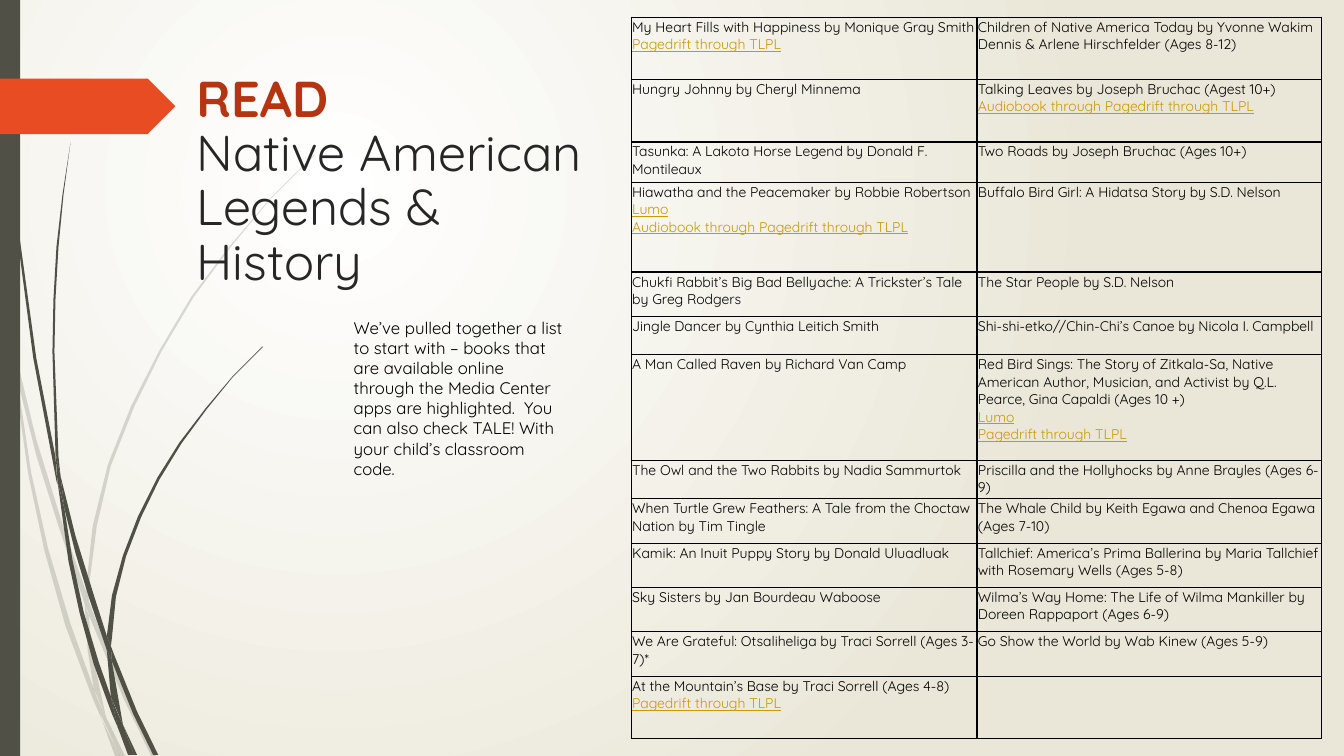
import pptx
import pptx.dml.color
import pptx.enum.shapes
import pptx.enum.text
import pptx.oxml
import pptx.oxml.ns
import pptx.util
from pptx.util import Inches

FONT = "Quicksand"
BLACK, DARK, LINK, ORANGE = "000000", "505046", "CC9900", "E84C22"


def color(hex_string):
    return pptx.dml.color.RGBColor.from_string(hex_string)


presentation = pptx.Presentation()
presentation.slide_width = Inches(13.33)
presentation.slide_height = Inches(7.5)
slide = presentation.slides.add_slide(presentation.slide_layouts[6])
shapes = slide.shapes

# Background: radial gradient, brightest left of the middle
background = slide.background.fill
background.gradient()
for stop, stop_color in zip(background.gradient_stops, ("FFFFFF", "EAE7D8")):
    stop.color.rgb = color(stop_color)
gradient = slide.background._cSld.find(".//" + pptx.oxml.ns.qn("a:gradFill"))
gradient.remove(gradient.find(pptx.oxml.ns.qn("a:lin")))
gradient.append(pptx.oxml.parse_xml(
    f'<a:path {pptx.oxml.ns.nsdecls("a")} path="circle">'
    '<a:fillToRect l="50000" t="50000" r="100000" b="100000"/></a:path>'))

# Grass blades: outlines of their pieces, pale ones behind dark ones
pale_pieces = [
    [(0.11, 3.5), (0.09, 3.22), (0, 2.82), (0, 2.99), (0.1, 3.44)],
    [(0.58, 5.22), (0.84, 5.99), (0.85, 5.86), (0.62, 5.2), (0.36, 4.36), (0.14, 3.45),
     (0.17, 3.76), (0.36, 4.52)],
    [(0.92, 6.07), (0.88, 5.96), (0.88, 6.1), (1.23, 6.94), (1.5, 7.5), (1.55, 7.5), (1.27, 6.92)],
    [(1.19, 7.5), (1.24, 7.5), (1.05, 7.11)],
    [(0.93, 6.83), (0.7, 6.19), (0.48, 5.45), (0.31, 4.69), (0.17, 3.76), (0.11, 3.5),
     (0.28, 4.7), (0.44, 5.46), (0.65, 6.21), (0.92, 6.93), (1.01, 7.14), (0.99, 7.07)],
    [(0.84, 5.99), (0.87, 6.46), (0.93, 6.83), (1.05, 7.11), (0.91, 6.46), (0.88, 6.1)],
    [(0.88, 5.84), (0.96, 5.22), (1.1, 4.62), (1.33, 4.04), (1.6, 3.49), (1.92, 2.95),
     (2.29, 2.45), (2.68, 1.98), (3.12, 1.54), (3.12, 1.53), (2.68, 1.97), (2.28, 2.44),
     (1.9, 2.94), (1.58, 3.48), (1.3, 4.03), (1.07, 4.61), (0.92, 5.22), (0.85, 5.86),
     (0.88, 5.96)],
    [(1.01, 7.14), (1.14, 7.5), (1.19, 7.5)],
    [(0.88, 6.08), (0.88, 5.96), (0.85, 5.86), (0.84, 5.99)],
    [(0.96, 6.92), (0.93, 6.83), (0.99, 7.07), (1.19, 7.5), (1.05, 7.11)],
]
dark_pieces = [
    [(0.07, 1.1), (0.17, 2.33), (0.33, 3.55), (0.56, 4.77), (0.57, 4.81), (0.55, 4.53),
     (0.36, 3.55), (0.19, 2.32), (0.08, 1.09), (0.04, 0), (0.03, 0)],
    [(0.88, 5.92), (1.06, 6.45), (1.06, 6.31), (0.93, 5.9), (0.75, 5.32), (0.6, 4.72),
     (0.64, 5.05), (0.75, 5.49)],
    [(1.13, 6.49), (1.1, 6.41), (1.11, 6.56), (1.32, 7.08), (1.52, 7.49), (1.57, 7.49),
     (1.36, 7.06)],
    [(1.1, 6.91), (0.98, 6.57), (0.83, 6.07), (0.72, 5.56), (0.64, 5.05), (0.57, 4.77),
     (0.68, 5.57), (0.79, 6.08), (0.93, 6.59), (1.11, 7.08), (1.17, 7.22), (1.16, 7.17)],
    [(0.6, 4.72), (0.58, 4.53), (0.54, 3.49), (0.55, 2.97), (0.58, 2.45), (0.63, 1.93),
     (0.7, 1.41), (0.62, 1.93), (0.56, 2.45), (0.53, 2.97), (0.52, 3.49), (0.55, 4.49)],
    [(1.33, 7.49), (1.36, 7.49), (1.22, 7.19)],
    [(0.57, 4.77), (0.64, 5.05), (0.6, 4.72), (0.55, 4.49)],
    [(1.11, 6.33), (1.15, 5.92), (1.25, 5.52), (1.4, 5.13), (1.58, 4.76), (1.8, 4.4),
     (2.05, 4.06), (2.31, 3.74), (2.61, 3.44), (2.6, 3.44), (2.31, 3.73), (2.04, 4.05),
     (1.78, 4.39), (1.56, 4.74), (1.37, 5.12), (1.22, 5.51), (1.11, 5.91), (1.06, 6.31),
     (1.1, 6.41)],
    [(1.17, 7.22), (1.27, 7.49), (1.31, 7.49)],
    [(1.06, 6.45), (1.1, 6.91), (1.22, 7.19), (1.11, 6.56)],
    [(1.06, 6.45), (1.11, 6.56), (1.1, 6.41), (1.06, 6.31)],
    [(1.16, 7.06), (1.1, 6.91), (1.17, 7.22), (1.3, 7.49), (1.33, 7.49), (1.22, 7.19)],
]
for opacity, pieces in ((20, pale_pieces), (100, dark_pieces)):
    for piece in pieces:
        outline = [(round(x * 100), round(y * 100)) for x, y in piece]
        builder = shapes.build_freeform(*outline[0], scale=Inches(0.01))
        builder.add_line_segments(outline[1:])
        blade = builder.convert_to_shape()
        blade.shadow.inherit = False
        blade.line.fill.background()
        blade.fill.solid()
        blade.fill.fore_color.rgb = color(DARK)
        if opacity < 100:
            blade_color = blade._element.spPr.find(".//" + pptx.oxml.ns.qn("a:srgbClr"))
            blade_color.append(pptx.oxml.parse_xml(
                f'<a:alpha {pptx.oxml.ns.nsdecls("a")} val="{opacity * 1000}"/>'))

# Side bar and arrow tag
preset = pptx.enum.shapes.MSO_SHAPE
for kind, top, width, height, fill_color in (
        (preset.RECTANGLE, 0, 0.2, 7.5, DARK),
        (preset.PENTAGON, 0.78, 1.74, 0.55, ORANGE)):
    shape = shapes.add_shape(kind, 0, Inches(top), Inches(width), Inches(height))
    shape.shadow.inherit = False
    shape.line.fill.background()
    shape.fill.solid()
    shape.fill.fore_color.rgb = color(fill_color)

# Title
title = shapes.add_textbox(Inches(1.85), Inches(0.68), Inches(4.52), Inches(1.65))
title.text_frame.word_wrap = True
paragraph = title.text_frame.paragraphs[0]
paragraph.line_spacing = 0.9
paragraph.font.size = pptx.util.Pt(36)
paragraph.font.name = FONT
for text, text_color, bold in (("READ", "B53513", True),
                               ("Native American Legends & ", "262626", False),
                               ("History", "262626", False)):
    if paragraph.runs:
        paragraph.add_line_break()
    run = paragraph.add_run()
    run.text = text
    run.font.bold = bold
    run.font.color.rgb = color(text_color)

# Introduction
introduction = shapes.add_textbox(Inches(3.41), Inches(3.1), Inches(2.3), Inches(4.13))
introduction.text_frame.word_wrap = True
paragraph = introduction.text_frame.paragraphs[0]
paragraph.text = ("We’ve pulled together a list to start with – books that are available online "
                  "through the Media Center apps are highlighted.  You can also check TALE! "
                  "With your child’s classroom code.")
paragraph.font.size = pptx.util.Pt(12)
paragraph.font.name = FONT
paragraph.font.color.rgb = color(BLACK)

# Book table: row height, left cell, right cell; lines after the first name online sources
EBOOK = "Pagedrift through TLPL"
AUDIOBOOK = "Audiobook through " + EBOOK
APP = "Lumo"
books = [
    (0.62, ["My Heart Fills with Happiness by Monique Gray Smith", EBOOK],
     ["Children of Native America Today by Yvonne Wakim Dennis & Arlene Hirschfelder (Ages 8-12)"]),
    (0.62, ["Hungry Johnny by Cheryl Minnema"],
     ["Talking Leaves by Joseph Bruchac (Agest 10+)", AUDIOBOOK]),
    (0.4, ["Tasunka: A Lakota Horse Legend by Donald F. Montileaux"],
     ["Two Roads by Joseph Bruchac (Ages 10+)"]),
    (0.89, ["Hiawatha and the Peacemaker by Robbie Robertson", APP, AUDIOBOOK],
     ["Buffalo Bird Girl: A Hidatsa Story by S.D. Nelson"]),
    (0.44, ["Chukfi Rabbit’s Big Bad Bellyache: A Trickster’s Tale by Greg Rodgers"],
     ["The Star People by S.D. Nelson"]),
    (0.38, ["Jingle Dancer by Cynthia Leitich Smith"],
     ["Shi-shi-etko//Chin-Chi’s Canoe by Nicola I. Campbell"]),
    (1.05, ["A Man Called Raven by Richard Van Camp"],
     ["Red Bird Sings: The Story of Zitkala-Sa, Native American Author, Musician, and Activist "
      "by Q.L. Pearce, Gina Capaldi (Ages 10 +)", APP, EBOOK]),
    (0.38, ["The Owl and the Two Rabbits by Nadia Sammurtok"],
     ["Priscilla and the Hollyhocks by Anne Brayles (Ages 6-9)"]),
    (0.44, ["When Turtle Grew Feathers: A Tale from the Choctaw Nation by Tim Tingle"],
     ["The Whale Child by Keith Egawa and Chenoa Egawa (Ages 7-10)"]),
    (0.44, ["Kamik: An Inuit Puppy Story by Donald Uluadluak"],
     ["Tallchief: America’s Prima Ballerina by Maria Tallchief with Rosemary Wells (Ages 5-8)"]),
    (0.44, ["Sky Sisters by Jan Bourdeau Waboose"],
     ["Wilma’s Way Home: The Life of Wilma Mankiller by Doreen Rappaport (Ages 6-9)"]),
    (0.44, ["We Are Grateful: Otsaliheliga by Traci Sorrell (Ages 3-7)*"],
     ["Go Show the World by Wab Kinew (Ages 5-9)"]),
    (0.62, ["At the Mountain’s Base by Traci Sorrell (Ages 4-8)", EBOOK], [""]),
]
table = shapes.add_table(len(books), 2, Inches(6.26), Inches(0.17),
                         Inches(6.85), Inches(7.15)).table
table.first_row = table.horz_banding = False
table.columns[0].width, table.columns[1].width = Inches(3.43), Inches(3.42)
for row, (height, *texts) in zip(table.rows, books):
    row.height = Inches(height)
    for cell, lines in zip(row.cells, texts):
        cell.margin_left = cell.margin_right = Inches(0.01)
        cell.margin_top = cell.margin_bottom = Inches(0.01)
        cell.text = "\n".join(lines)
        for index, paragraph in enumerate(cell.text_frame.paragraphs):
            paragraph.font.size = pptx.util.Pt(10)
            paragraph.font.name = FONT
            paragraph.font.color.rgb = color(LINK if index else BLACK)
            paragraph.font.underline = index > 0
        cell.fill.background()
        for position, side in enumerate(("lnL", "lnR", "lnT", "lnB")):
            cell._tc.tcPr.insert(position, pptx.oxml.parse_xml(
                f'<a:{side} {pptx.oxml.ns.nsdecls("a")} w="12700"><a:solidFill>'
                f'<a:srgbClr val="{BLACK}"/></a:solidFill></a:{side}>'))

presentation.save("out.pptx")
